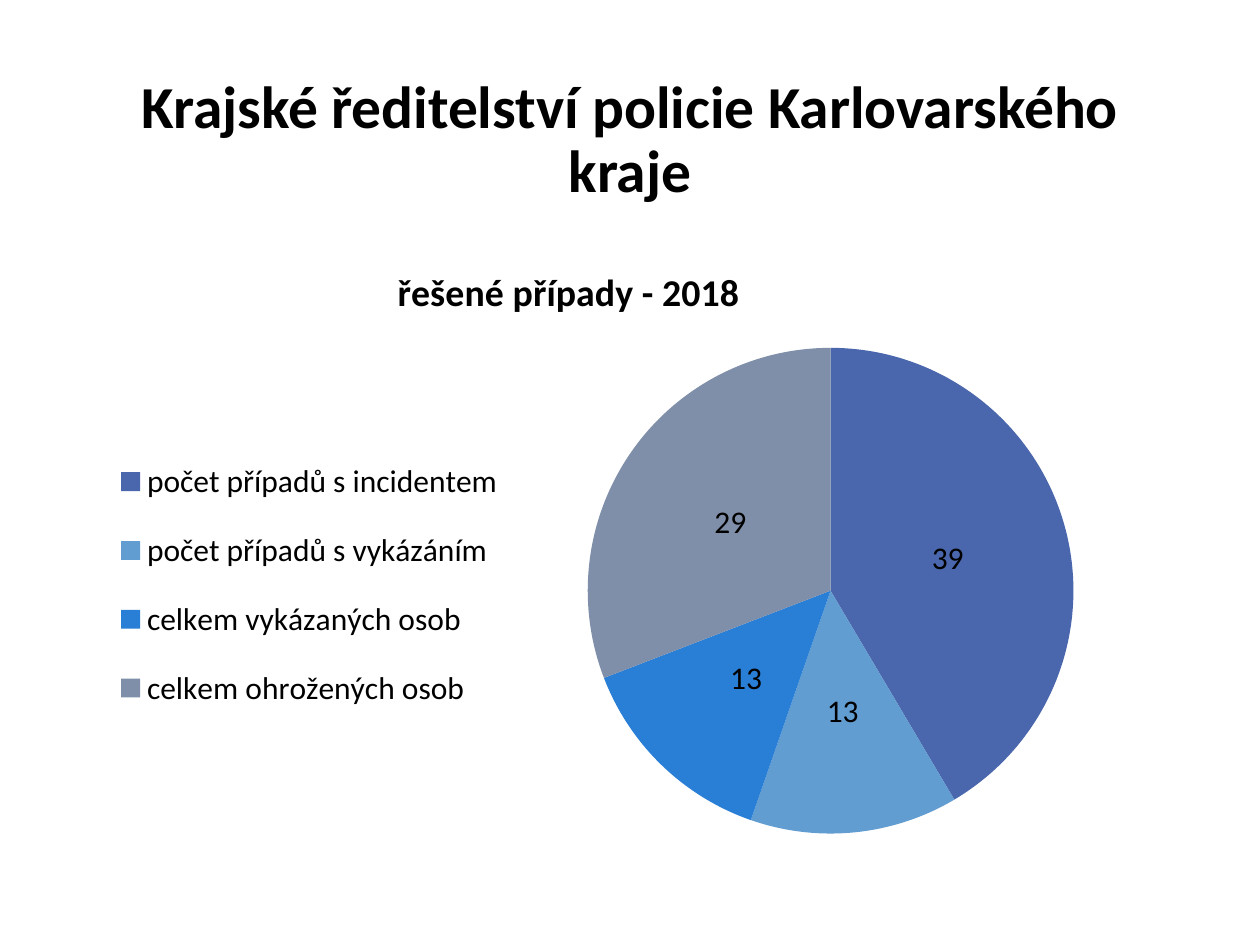
from lxml.etree import SubElement
from pptx import Presentation
from pptx.chart.data import CategoryChartData
from pptx.dml.color import RGBColor
from pptx.enum.chart import XL_CHART_TYPE, XL_LABEL_POSITION, XL_LEGEND_POSITION
from pptx.enum.text import MSO_ANCHOR, MSO_AUTO_SIZE, PP_ALIGN
from pptx.oxml.ns import qn
from pptx.util import Cm, Pt

FONT = "Calibri"
BLACK = "000000"
CASES = [
    ("počet případů s incidentem", 39, "4A66AC"),
    ("počet případů s vykázáním", 13, "629DD1"),
    ("celkem vykázaných osob", 13, "297FD5"),
    ("celkem ohrožených osob", 29, "7F8FA9"),
]


def color(hex_string):
    return RGBColor.from_string(hex_string)


def style_font(font, size, bold=False):
    font.name = FONT
    font.size = Pt(size)
    font.bold = bold
    font.color.rgb = color(BLACK)


def set_layout(element, successors, x, y, width=None, height=None, inner=False):
    """Place a chart part by fractions of the chart's size."""
    for old_layout in element.findall(qn("c:layout")):
        element.remove(old_layout)
    layout = element.makeelement(qn("c:layout"))
    manual = SubElement(layout, qn("c:manualLayout"))
    settings = [("layoutTarget", "inner" if inner else None),
                ("xMode", "edge"), ("yMode", "edge"),
                ("x", x), ("y", y), ("w", width), ("h", height)]
    for tag, value in settings:
        if value is not None:
            SubElement(manual, qn(f"c:{tag}")).set("val", str(value))
    names = [qn(f"c:{name}") for name in successors]
    following = next(child for child in element if child.tag in names)
    following.addprevious(layout)


def format_title(slide, text):
    title = slide.shapes.title
    title.left, title.top, title.width, title.height = Cm(1.27), Cm(1.96), Cm(22.86), Cm(1.78)
    frame = title.text_frame
    frame.text = text
    frame.word_wrap = True
    frame.auto_size = MSO_AUTO_SIZE.NONE
    frame.vertical_anchor = MSO_ANCHOR.MIDDLE
    paragraph = frame.paragraphs[0]
    paragraph.alignment = PP_ALIGN.CENTER
    paragraph.line_spacing = 0.9
    style_font(paragraph.font, 34, bold=True)


def format_chart_title(chart, text):
    chart.has_title = True
    chart_title = chart.chart_title
    chart_title.text_frame.text = text
    style_font(chart_title.text_frame.paragraphs[0].font, 21.6, bold=True)
    set_layout(chart_title._element, ["overlay"], 0.28, 0.01)


def format_legend(chart):
    chart.has_legend = True
    legend = chart.legend
    legend.position = XL_LEGEND_POSITION.LEFT
    legend.include_in_layout = False
    style_font(legend.font, 18)
    set_layout(legend._element, ["overlay"], 0.02, 0.3, 0.37, 0.51)


def format_pie(plot, colors):
    plot.vary_by_categories = True
    points = plot.series[0].points
    for index, hex_string in enumerate(colors):
        fill = points[index].format.fill
        fill.solid()
        fill.fore_color.rgb = color(hex_string)
    plot.has_data_labels = True
    labels = plot.data_labels
    labels.show_value = True
    labels.show_percentage = False
    labels.position = XL_LABEL_POSITION.CENTER
    style_font(labels.font, 18)


def add_pie_chart(slide, title, cases):
    names, values, colors = zip(*cases)
    data = CategoryChartData()
    data.categories = names
    data.add_series("Series 1", values)
    chart = slide.shapes.add_chart(
        XL_CHART_TYPE.PIE, Cm(1.75), Cm(5.08), Cm(21.89), Cm(12.09), data).chart
    style_font(chart.font, 18)
    format_chart_title(chart, title)
    format_legend(chart)
    format_pie(chart.plots[0], colors)
    plot_area = chart._chartSpace.chart.plotArea
    set_layout(plot_area, ["pieChart"], 0.46, 0.16, 0.45, 0.81, inner=True)


def main():
    presentation = Presentation()
    presentation.slide_width, presentation.slide_height = Cm(25.4), Cm(19.05)
    slide = presentation.slides.add_slide(presentation.slide_layouts[5])
    format_title(slide, "Krajské ředitelství policie Karlovarského kraje")
    add_pie_chart(slide, "řešené případy - 2018", CASES)
    presentation.save("out.pptx")


if __name__ == "__main__":
    main()
